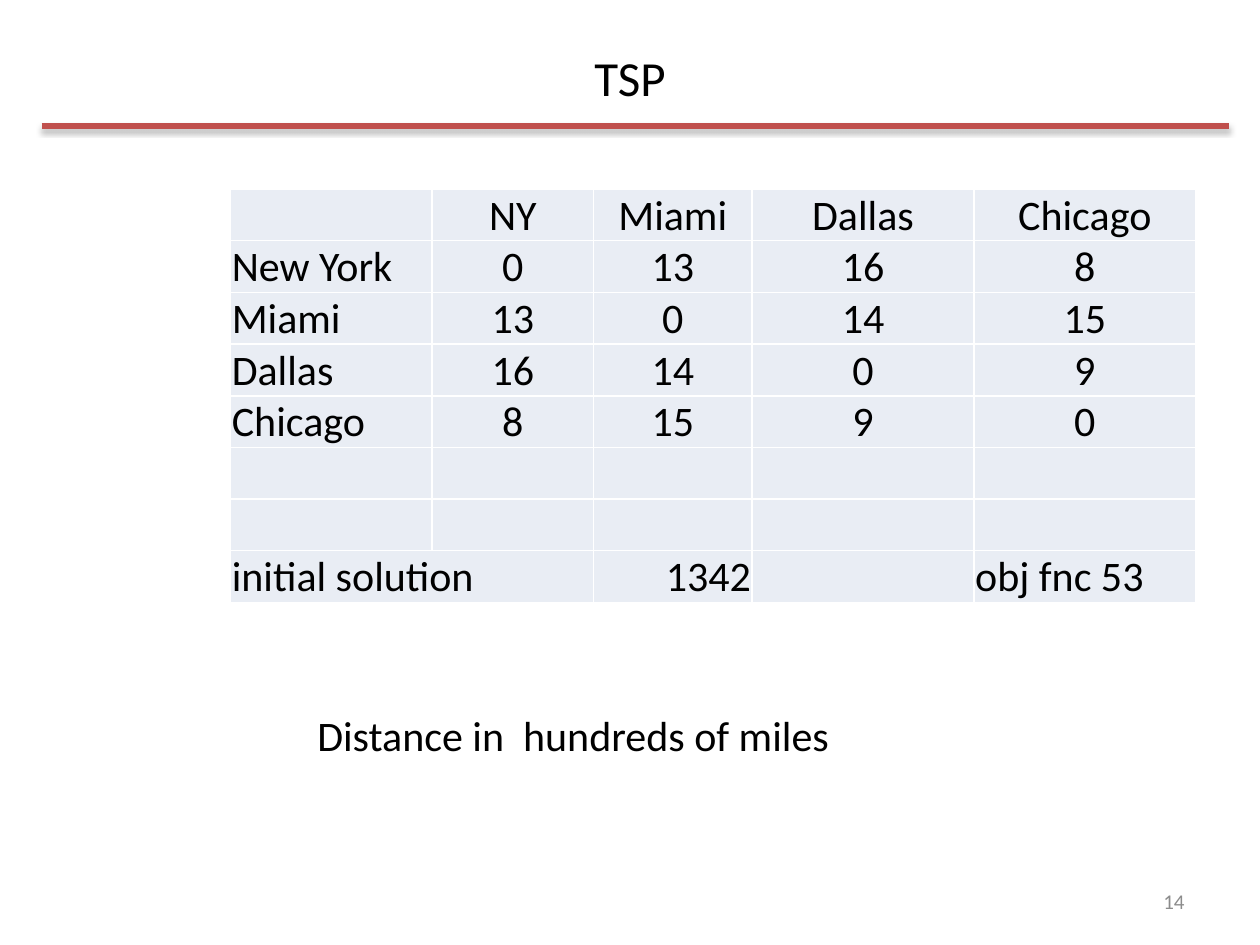
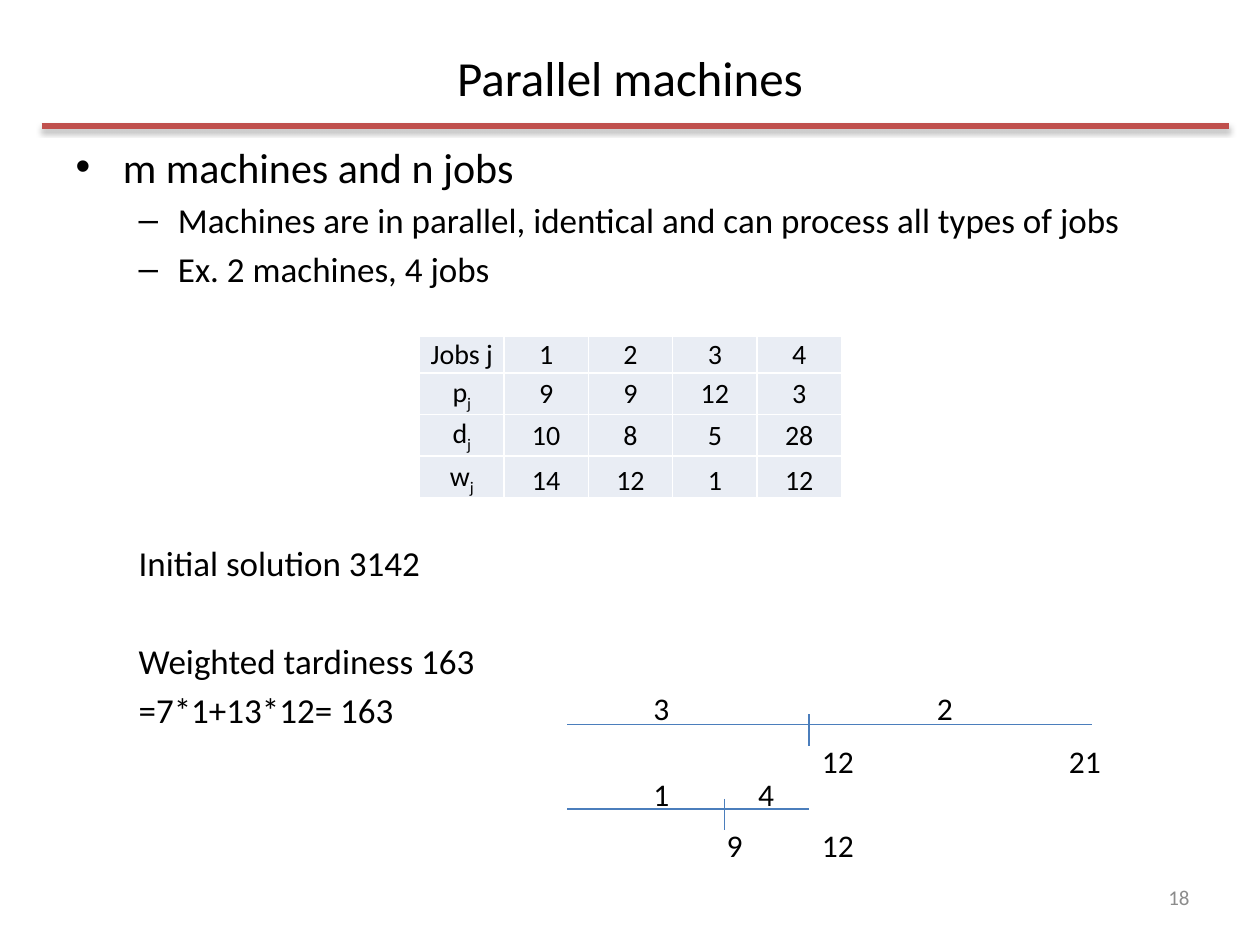
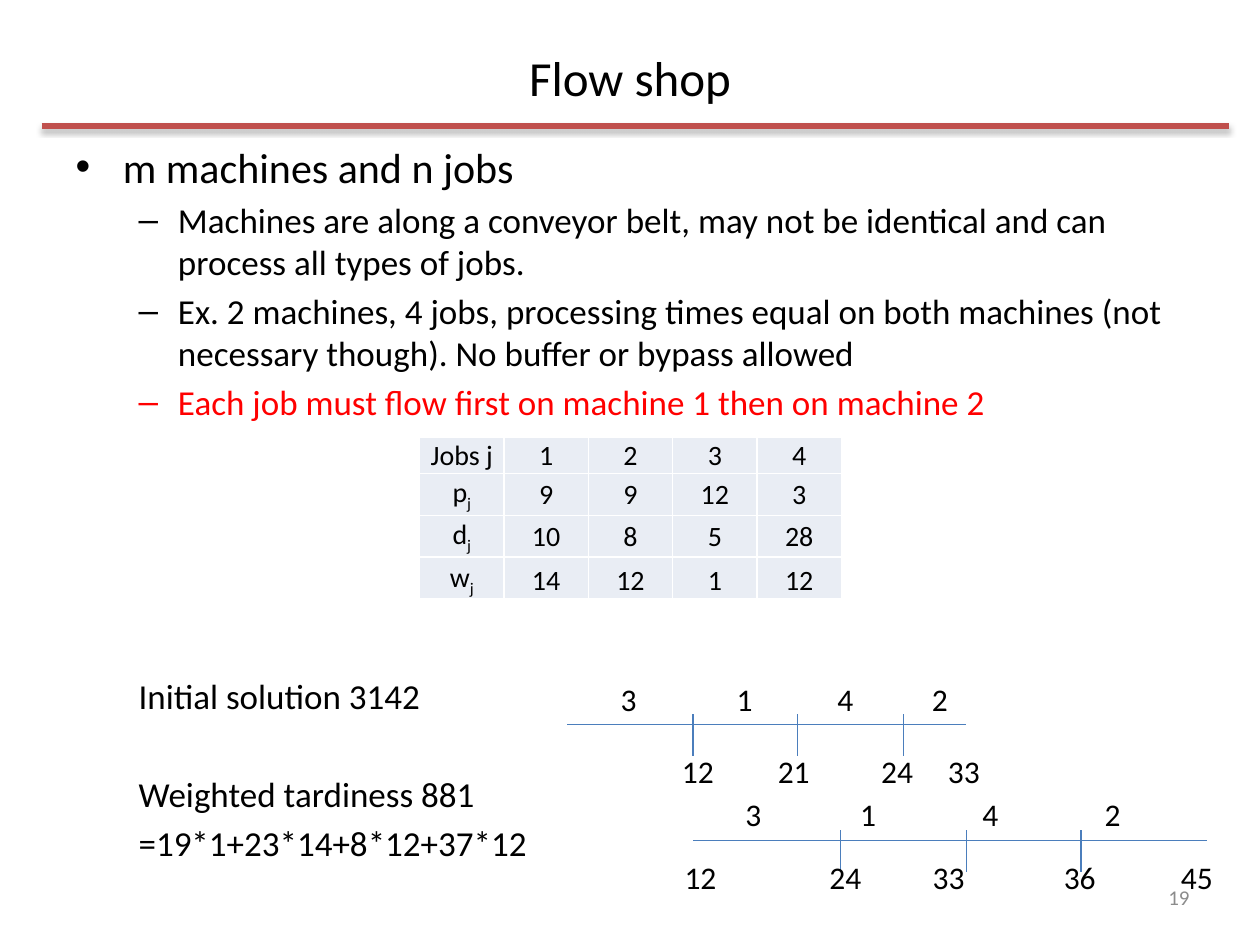
from dataclasses import dataclass

from lxml import etree
from pptx import Presentation
from pptx.dml.color import RGBColor
from pptx.enum.shapes import MSO_CONNECTOR
from pptx.enum.text import MSO_ANCHOR, MSO_AUTO_SIZE, PP_ALIGN
from pptx.oxml.ns import qn
from pptx.util import Inches, Pt

LEFT, CENTER, RIGHT = PP_ALIGN.LEFT, PP_ALIGN.CENTER, PP_ALIGN.RIGHT
TOP, MIDDLE, BOTTOM = MSO_ANCHOR.TOP, MSO_ANCHOR.MIDDLE, MSO_ANCHOR.BOTTOM
STRAIGHT = MSO_CONNECTOR.STRAIGHT
NO_AUTOFIT = MSO_AUTO_SIZE.NONE


@dataclass(frozen=True)
class Theme:
    font: str = "Calibri"
    text: str = "000000"
    alert: str = "FF0000"
    muted: str = "8C8C8C"
    rule: str = "C0504D"
    axis: str = "4B7EBC"
    cell: str = "E9EDF4"
    border: str = "FFFFFF"
    title: int = 28
    body: int = 24
    sub: int = 20
    label: int = 18
    small: int = 16
    footer: int = 12
    rule_width: float = 3
    axis_width: float = 0.75


T = Theme()
TITLE_ONLY, TITLE_AND_BODY = 5, 1
LABEL_WIDTH = 0.46
SUB_SPACE = 4
SUB_PITCH = 28

DISTANCES = [
    ["", "NY", "Miami", "Dallas", "Chicago"],
    ["New York", "0", "13", "16", "8"],
    ["Miami", "13", "0", "14", "15"],
    ["Dallas", "16", "14", "0", "9"],
    ["Chicago", "8", "15", "9", "0"],
    [""] * 5,
    [""] * 5,
    ["initial solution", "", "1342", "", "obj fnc 53"],
]
JOBS = [
    ["Jobs j", "1", "2", "3", "4"],
    ["p_j", "9", "9", "12", "3"],
    ["d_j", "10", "8", "5", "28"],
    ["w_j", "14", "12", "1", "12"],
]


def add_run(p, text, size, color=T.text):
    r = p.add_run()
    r.text = text
    r.font.name = T.font
    r.font.size = Pt(size)
    r.font.color.rgb = RGBColor.from_string(color)
    return r


def add_text(s, box, text, size, color=T.text, align=LEFT, anchor=TOP):
    tf = s.shapes.add_textbox(*map(Inches, box)).text_frame
    tf.word_wrap = False
    tf.vertical_anchor = anchor
    p = tf.paragraphs[0]
    p.alignment = align
    add_run(p, text, size, color)


def add_line(s, x1, y1, x2, y2, color=T.axis, width=T.axis_width):
    line = s.shapes.add_connector(STRAIGHT, *map(Inches, (x1, y1, x2, y2)))
    line.line.color.rgb = RGBColor.from_string(color)
    line.line.width = Pt(width)
    effects = etree.SubElement(line.element.spPr, qn("a:effectLst"))
    return line, effects


def add_rule(prs, s):
    line, effects = add_line(s, 0.33, 1, 9.75, 1, T.rule, T.rule_width)
    shadow = etree.SubElement(effects, qn("a:outerShdw"), blurRad=str(Pt(3.1)),
                              dist=str(Pt(1.8)), dir="5400000", rotWithShape="0")
    color = etree.SubElement(shadow, qn("a:srgbClr"), val="000000")
    etree.SubElement(color, qn("a:alpha"), val="35000")
    prs.slide_master.shapes.element.append(line.element)


def style_master(prs):
    master = prs.slide_master
    boxes = [(0.5, 0.3, 9, 0.62), (0.5, 1.07, 9, 5.83)]
    for sp, box in zip(master.placeholders, boxes):
        sp.left, sp.top, sp.width, sp.height = map(Inches, box)
        sp.text_frame.auto_size = NO_AUTOFIT
    for style, level, size in [("title", 1, T.title), ("body", 1, T.body), ("body", 2, T.sub)]:
        steps = (f"p:{style}Style", f"a:lvl{level}pPr", "a:defRPr")
        props = master.element.find(".//" + "/".join(map(qn, steps)))
        props.set("sz", str(size * 100))


def add_slide(prs, layout, title, number, number_box):
    s = prs.slides.add_slide(prs.slide_layouts[layout])
    p = s.shapes.title.text_frame.paragraphs[0]
    add_run(p, title, T.title)
    add_text(s, number_box, number, T.footer, T.muted, RIGHT, MIDDLE)
    return s


def add_body(s, heading, points, notes):
    tf = s.placeholders[1].text_frame
    add_run(tf.paragraphs[0], heading, T.body)
    for text, color in points:
        p = tf.add_paragraph()
        p.level = 1
        add_run(p, text, T.sub, color)
    for text, lines_skipped in notes:
        p = tf.add_paragraph()
        p.level = 1
        p.space_before = Pt(SUB_SPACE + lines_skipped * SUB_PITCH)
        props = p._p.get_or_add_pPr()
        props.set("marL", str(Inches(0.5)))
        props.set("indent", "0")
        etree.SubElement(props, qn("a:buNone"))
        add_run(p, text, T.sub)


def style_cell(cell, anchor):
    cell.margin_left = cell.margin_right = cell.margin_top = Inches(0.01)
    cell.margin_bottom = 0
    cell.vertical_anchor = anchor
    props = cell._tc.get_or_add_tcPr()
    for side in "LRTB":
        border = etree.SubElement(props, qn(f"a:ln{side}"), w=str(Pt(1)))
        fill = etree.SubElement(border, qn("a:solidFill"))
        etree.SubElement(fill, qn("a:srgbClr"), val=T.border)
    cell.fill.solid()
    cell.fill.fore_color.rgb = RGBColor.from_string(T.cell)


def add_grid(s, left, top, widths, heights, rows, size, anchors, aligns):
    box = map(Inches, (left, top, sum(widths), sum(heights)))
    table = s.shapes.add_table(len(rows), len(widths), *box).table
    table.first_row = table.horz_banding = False
    for column, width in zip(table.columns, widths):
        column.width = Inches(width)
    for i, values in enumerate(rows):
        table.rows[i].height = Inches(heights[i])
        for j, value in enumerate(values):
            cell = table.cell(i, j)
            style_cell(cell, anchors[i])
            p = cell.text_frame.paragraphs[0]
            p.alignment = aligns.get((i, j), CENTER)
            base, _, subscript = value.partition("_")
            if base:
                add_run(p, base, size)
            if subscript:
                r = add_run(p, subscript, size)
                r.font._element.set("baseline", "-25000")
    return table


def add_distances(s):
    aligns = {(i, 0): LEFT for i in range(len(DISTANCES))}
    aligns.update({(7, 2): RIGHT, (7, 4): LEFT})
    table = add_grid(s, 1.83, 1.5, [1.6, 1.28, 1.26, 1.76, 1.76], [0.41] * 8,
                     DISTANCES, T.body, [BOTTOM] * 8, aligns)
    table.cell(7, 0).merge(table.cell(7, 1))


def add_jobs(s, top):
    add_grid(s, 3.33, top, [0.67] * 5, [0.29] + [0.33] * 3, JOBS, T.small,
             [MIDDLE] * 3 + [BOTTOM], {})


def add_timeline(s, start, end, y, ticks, tick_length):
    add_line(s, start, y, end, y)
    for x in ticks:
        add_line(s, x, y - 0.08, x, y - 0.08 + tick_length)


def add_labels(s, top, labels):
    for text, center in labels:
        box = (center - LABEL_WIDTH / 2, top, LABEL_WIDTH, 0.4)
        add_text(s, box, text, T.label, align=CENTER)


def build_tsp(prs):
    s = add_slide(prs, TITLE_ONLY, "TSP", "14", (7.17, 6.95, 2.33, 0.4))
    add_rule(prs, s)
    add_distances(s)
    add_text(s, (2.42, 5.58, 4.3, 0.5), "Distance in  hundreds of miles", T.body)


def build_parallel(prs):
    s = add_slide(prs, TITLE_AND_BODY, "Parallel machines", "18", (7.21, 6.92, 2.33, 0.4))
    add_body(s, "m machines and n jobs", [
        ("Machines are in parallel, identical and can process all types of jobs", T.text),
        ("Ex. 2 machines, 4 jobs", T.text),
    ], [
        ("Initial solution 3142", 5),
        ("Weighted tardiness 163", 1),
        ("=7*1+13*12= 163", 0),
    ])
    add_jobs(s, 2.67)
    add_timeline(s, 4.5, 8.67, 5.75, [6.42], 0.25)
    add_timeline(s, 4.5, 6.42, 6.42, [5.75], 0.25)
    add_labels(s, 5.42, [("3", 5.25), ("2", 7.5)])
    add_labels(s, 5.84, [("12", 6.65), ("21", 8.61)])
    add_labels(s, 6.1, [("1", 5.25), ("4", 6.08)])
    add_labels(s, 6.51, [("9", 5.83), ("12", 6.65)])


def build_flow_shop(prs):
    s = add_slide(prs, TITLE_AND_BODY, "Flow shop", "19", (7.21, 6.92, 2.33, 0.4))
    add_body(s, "m machines and n jobs", [
        ("Machines are along a conveyor belt, may not be identical and can "
         "process all types of jobs.", T.text),
        ("Ex. 2 machines, 4 jobs, processing times equal on both machines (not "
         "necessary though). No buffer or bypass allowed", T.text),
        ("Each job must flow first on machine 1 then on machine 2", T.alert),
    ], [
        ("Initial solution 3142", 5),
        ("Weighted tardiness 881", 1),
        ("=19*1+23*14+8*12+37*12", 0),
    ])
    add_jobs(s, 3.47)
    add_timeline(s, 4.5, 7.67, 5.75, [5.5, 6.33, 7.17], 0.33)
    add_timeline(s, 5.5, 9.58, 6.67, [6.67, 7.67, 8.58], 0.33)
    add_labels(s, 5.35, [("3", 4.99), ("1", 5.91), ("4", 6.71), ("2", 7.46)])
    add_labels(s, 5.92, [("12", 5.54), ("21", 6.3), ("24", 7.12), ("33", 7.65)])
    add_labels(s, 6.26, [("3", 5.98), ("1", 6.89), ("4", 7.86), ("2", 8.83)])
    add_labels(s, 6.76, [("12", 5.56), ("24", 6.71), ("33", 7.53), ("36", 8.57), ("45", 9.5)])


def main():
    prs = Presentation()
    prs.slide_width, prs.slide_height = Inches(10), Inches(7.5)
    style_master(prs)
    build_tsp(prs)
    build_parallel(prs)
    build_flow_shop(prs)
    prs.save("out.pptx")


if __name__ == "__main__":
    main()
